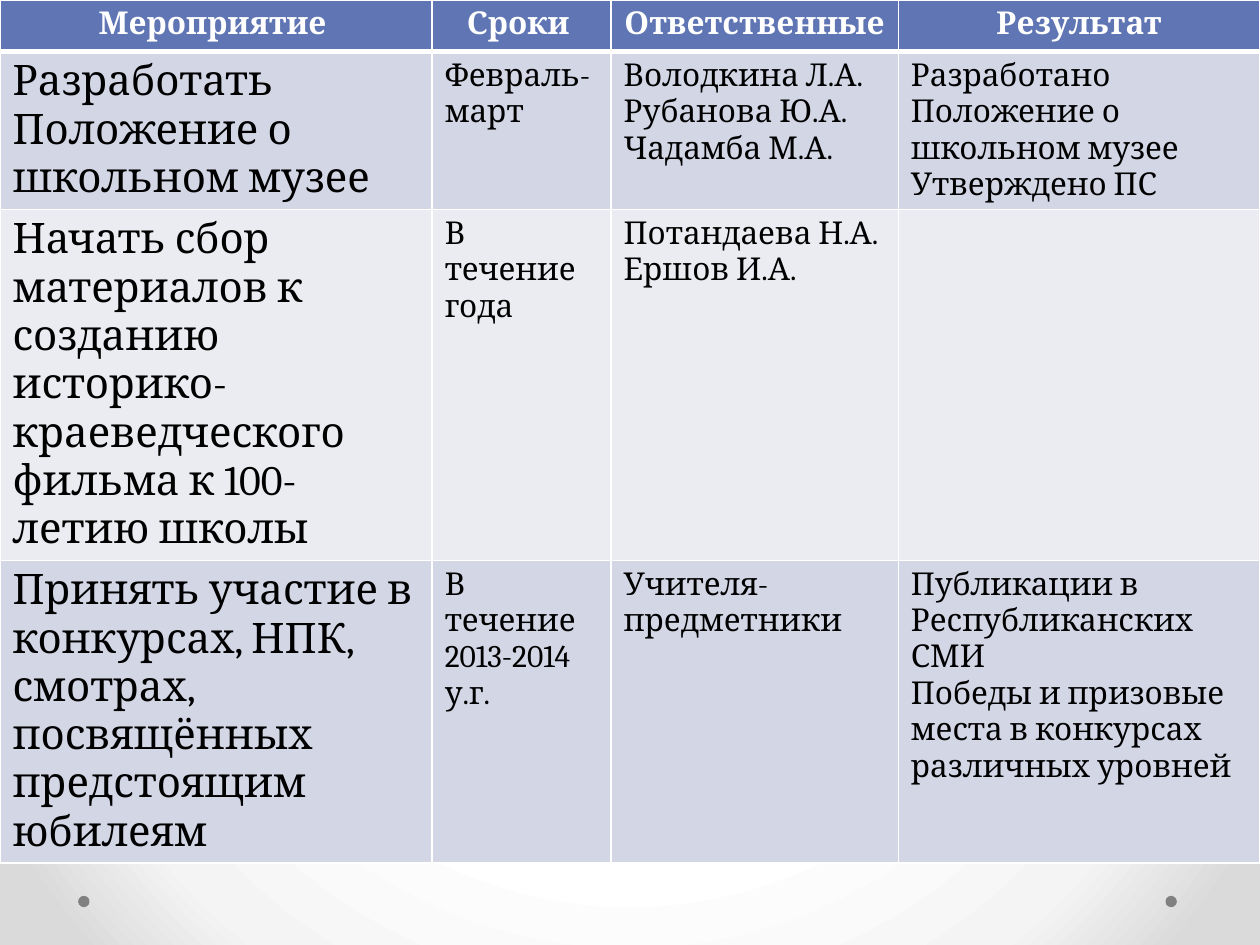
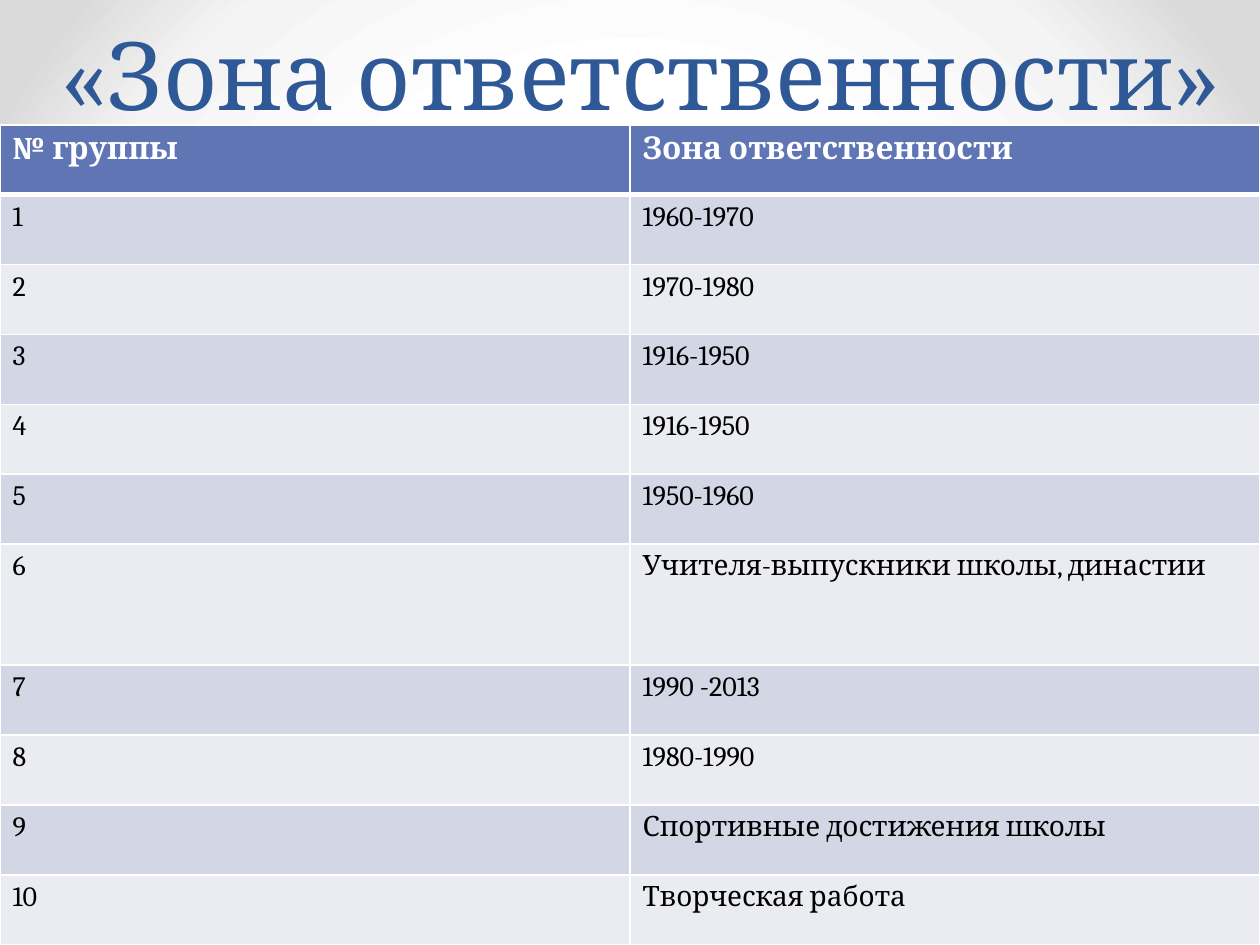
from dataclasses import dataclass

from pptx import Presentation
from pptx.dml.color import RGBColor
from pptx.enum import shapes, text
from pptx.oxml import parse_xml
from pptx.oxml.ns import nsdecls, qn
from pptx.util import Inches, Pt

FONT = "Cambria"
WHITE = RGBColor(0xFF, 0xFF, 0xFF)
BLACK = RGBColor(0x00, 0x00, 0x00)
HEADER_BLUE = RGBColor(0x60, 0x76, 0xB4)
TITLE_BLUE = RGBColor(0x2F, 0x58, 0x97)
BANDS = (RGBColor(0xD2, 0xD6, 0xE5), RGBColor(0xEA, 0xEC, 0xF2))
DOT_GRAY = RGBColor(0x80, 0x80, 0x80)
BACKGROUND_STOPS = (
    (50, WHITE),
    (76, RGBColor(0xF4, 0xF4, 0xF4)),
    (92, RGBColor(0xDA, 0xDA, 0xDA)),
)
DOT_LEFTS = (0.62, 9.25)
HEADER_SIZE = 18
HEADER_RULE = 3


@dataclass
class TableSpec:
    """Sizes in inches, text sizes in points; line breaks part paragraphs."""
    top: float
    column_widths: list[float]
    row_heights: list[float]
    body_sizes: list[int]
    header_alignment: text.PP_ALIGN
    rows: list[tuple[str, ...]]


PLAN = TableSpec(
    top=0,
    column_widths=[3.43, 1.42, 2.28, 2.87],
    row_heights=[0.41, 1.25, 2.78, 2.4],
    body_sizes=[24, 18, 18, 18],
    header_alignment=text.PP_ALIGN.CENTER,
    rows=[
        ("Мероприятие ", "Сроки ", "Ответственные", "Результат"),
        ("Разработать Положение о школьном музее",
         "Февраль-март",
         "Володкина Л.А.\nРубанова Ю.А.\nЧадамба М.А.",
         "Разработано Положение о школьном музее\nУтверждено ПС"),
        ("Начать сбор материалов к созданию историко-краеведческого "
         "фильма к 100-летию школы",
         "В течение года",
         "Потандаева Н.А.\nЕршов И.А.",
         ""),
        ("Принять участие в конкурсах, НПК, смотрах, посвящённых "
         "предстоящим юбилеям",
         "В течение 2013-2014 у.г.",
         "Учителя-предметники",
         "Публикации в Республиканских СМИ\n"
         "Победы и призовые места в конкурсах различных уровней"),
    ],
)

ZONES = [
    "1960-1970", "1970-1980", "1916-1950", "1916-1950", "1950-1960",
    "Учителя-выпускники школы, династии", "1990 -2013", "1980-1990",
    "Спортивные достижения школы", "Творческая работа",
]

RESPONSIBILITY = TableSpec(
    top=0.99,
    column_widths=[5, 5],
    row_heights=[0.555] * 6 + [0.96] + [0.555] * 4,
    body_sizes=[16, 16],
    header_alignment=text.PP_ALIGN.LEFT,
    rows=[("№ группы", "Зона ответственности")]
    + [(str(number), zone) for number, zone in enumerate(ZONES, 1)],
)


def add_run(paragraph, wording: str, size: int, color: RGBColor,
            bold: bool = False) -> None:
    run = paragraph.add_run()
    run.text = wording
    run.font.name = FONT
    run.font.size = Pt(size)
    run.font.bold = bold
    run.font.color.rgb = color


def set_background(slide) -> None:
    slide.background.fill.solid()
    properties = slide.element.find(".//" + qn("p:bgPr"))
    stops = "".join(
        f'<a:gs pos="{position * 1000}"><a:srgbClr val="{color}"/></a:gs>'
        for position, color in BACKGROUND_STOPS)
    gradient = parse_xml(
        f'<a:gradFill {nsdecls("a")} rotWithShape="1"><a:gsLst>{stops}</a:gsLst>'
        '<a:path path="circle"><a:fillToRect l="50000" t="50000" r="50000" '
        'b="50000"/></a:path></a:gradFill>')
    properties.replace(properties[0], gradient)


def add_slide(presentation):
    """Add a blank slide with the shared background and footer dots."""
    slide = presentation.slides.add_slide(presentation.slide_layouts[6])
    set_background(slide)
    for left in DOT_LEFTS:
        dot = slide.shapes.add_shape(
            shapes.MSO_SHAPE.OVAL, Inches(left), Inches(7.11),
            Inches(0.09), Inches(0.09))
        dot.shadow.inherit = False
        dot.fill.solid()
        dot.fill.fore_color.rgb = DOT_GRAY
        dot.line.fill.background()
    return slide


def add_title(slide, wording: str) -> None:
    box = slide.shapes.add_textbox(
        Inches(0.28), Inches(0.02), Inches(9.61), Inches(1.06))
    frame = box.text_frame
    frame.word_wrap = True
    frame.vertical_anchor = text.MSO_ANCHOR.BOTTOM
    paragraph = frame.paragraphs[0]
    paragraph.alignment = text.PP_ALIGN.CENTER
    paragraph.line_spacing = Pt(58)
    add_run(paragraph, wording, 54, TITLE_BLUE)


def set_borders(cell, top: int, bottom: int) -> None:
    properties = cell._tc.get_or_add_tcPr()
    widths = {"lnL": 1, "lnR": 1, "lnT": top, "lnB": bottom}
    for index, (tag, width) in enumerate(widths.items()):
        properties.insert(index, parse_xml(
            f'<a:{tag} {nsdecls("a")} w="{Pt(width)}"><a:solidFill>'
            f'<a:srgbClr val="{WHITE}"/></a:solidFill></a:{tag}>'))


def fill_cell(cell, wording: str, row: int, size: int,
              header_alignment: text.PP_ALIGN) -> None:
    is_header = row == 0
    cell.fill.solid()
    cell.fill.fore_color.rgb = HEADER_BLUE if is_header else BANDS[(row - 1) % 2]
    set_borders(cell, top=HEADER_RULE if row == 1 else 1,
                bottom=HEADER_RULE if is_header else 1)
    if not wording:
        return
    frame = cell.text_frame
    for index, line in enumerate(wording.split("\n")):
        paragraph = frame.add_paragraph() if index else frame.paragraphs[0]
        if is_header:
            paragraph.alignment = header_alignment
            add_run(paragraph, line, HEADER_SIZE, WHITE, bold=True)
        else:
            add_run(paragraph, line, size, BLACK)


def add_table(slide, spec: TableSpec) -> None:
    table = slide.shapes.add_table(
        len(spec.rows), len(spec.column_widths), Inches(0), Inches(spec.top),
        Inches(sum(spec.column_widths)), Inches(sum(spec.row_heights))).table
    table.horz_banding = False
    for column, width in zip(table.columns, spec.column_widths):
        column.width = Inches(width)
    for row, height in zip(table.rows, spec.row_heights):
        row.height = Inches(height)
    for row, wordings in enumerate(spec.rows):
        for column, (wording, size) in enumerate(zip(wordings, spec.body_sizes)):
            fill_cell(table.cell(row, column), wording, row, size,
                      spec.header_alignment)


def main() -> None:
    presentation = Presentation()
    presentation.slide_width = Inches(10)
    presentation.slide_height = Inches(7.5)

    add_table(add_slide(presentation), PLAN)

    zone_slide = add_slide(presentation)
    add_title(zone_slide, "«Зона ответственности»")
    add_table(zone_slide, RESPONSIBILITY)

    presentation.save("out.pptx")


if __name__ == "__main__":
    main()
